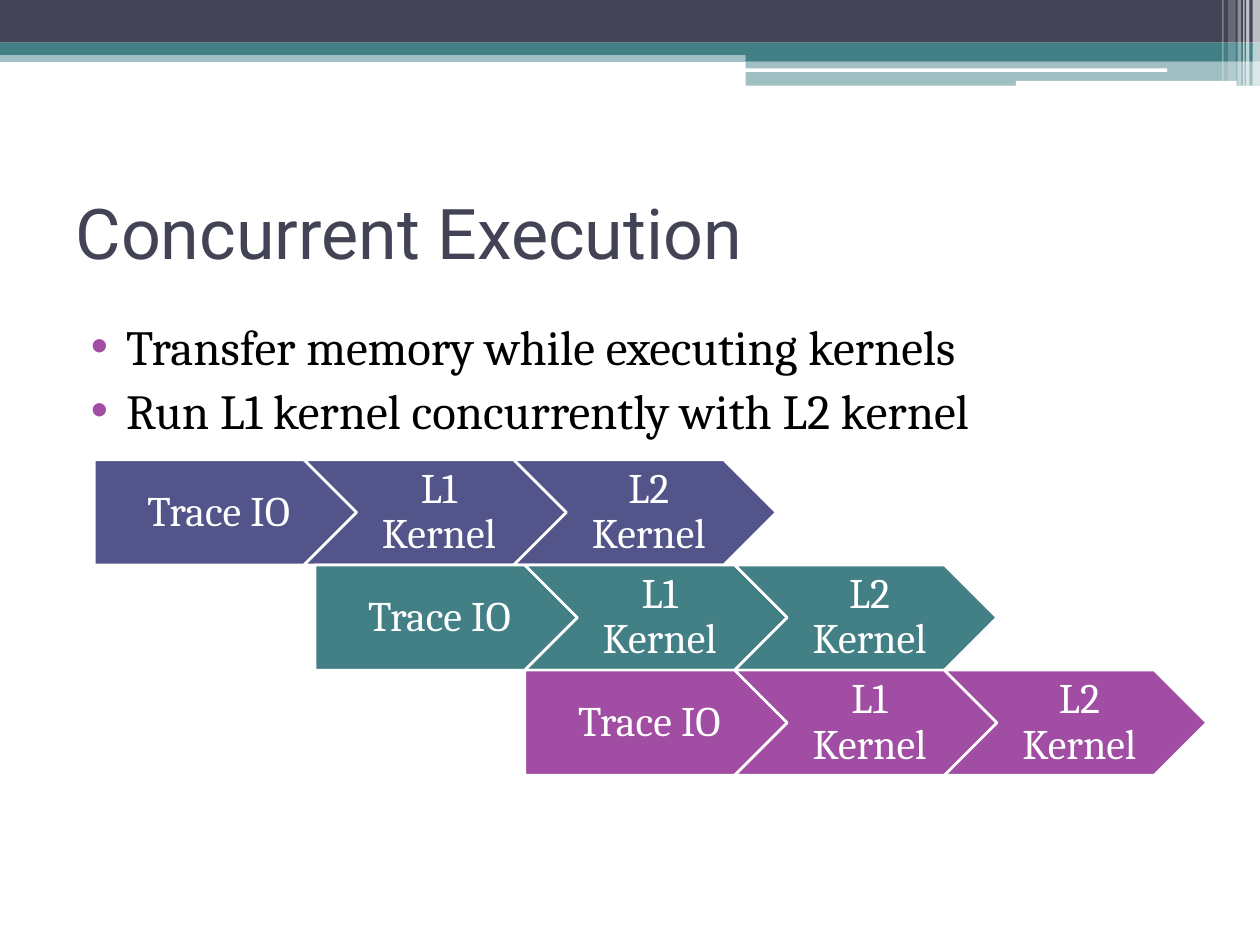
from lxml.etree import SubElement
from pptx import Presentation
from pptx.dml.color import RGBColor
from pptx.enum.shapes import MSO_SHAPE as Shape
from pptx.enum.text import MSO_ANCHOR as Anchor, MSO_AUTO_SIZE as AutoSize, PP_ALIGN as Align
from pptx.oxml.ns import qn
from pptx.util import Cm, Pt

COLORS = {
    "slate": "424456", "teal": "438086", "indigo": "53548A",
    "purple": "A04DA3", "white": "FFFFFF", "black": "000000",
}
FRAME = {"word_wrap": True, "auto_size": AutoSize.NONE}
MIDDLE = {**FRAME, "vertical_anchor": Anchor.MIDDLE}
STEP_FRAME = {**MIDDLE, "margin_right": Cm(0.1), "margin_top": Cm(0.18), "margin_bottom": Cm(0.18)}
TITLE_FONT = {"name": "Roboto", "size": Pt(40)}
BULLET_FONT = {"name": "Cambria", "size": Pt(28)}
STEP_FONT = {"name": "Cambria", "size": Pt(24)}


def apply_format(target, values, color=None):
    for name, value in values.items():
        setattr(target, name, value)
    if color:
        target.color.rgb = RGBColor.from_string(COLORS[color])


def add_filled(kind, left, top, width, height, color, opacity=100):
    shape = slide.shapes.add_shape(kind, Cm(left), Cm(top), Cm(width), Cm(height))
    shape.shadow.inherit = False
    shape.line.fill.background()
    shape.fill.solid()
    shape.fill.fore_color.rgb = RGBColor.from_string(COLORS[color])
    if opacity < 100:
        srgb = shape.fill._xPr.find(qn("a:solidFill")).find(qn("a:srgbClr"))
        SubElement(srgb, qn("a:alpha"), val=str(opacity * 1000))
    return shape


deck = Presentation()
deck.slide_width, deck.slide_height = Cm(25.4), Cm(19.05)
slide = deck.slides.add_slide(deck.slide_layouts[1])

# Header bands
for left, top, width, height, color, opacity in (
    (0, 1.02, 25.4, 0.23, "teal", 50),
    (0, 0, 25.4, 0.86, "slate", 100),
    (0, 0.86, 25.4, 0.25, "teal", 100),
    (15.03, 0.99, 10.37, 0.24, "teal", 100),
    (15.03, 1.23, 10.37, 0.5, "teal", 50),
):
    add_filled(Shape.RECTANGLE, left, top, width, height, color, opacity)

# White header lines
for left, top, width, height in ((15.02, 1.38, 8.51, 0.07), (20.48, 1.63, 4.45, 0.1)):
    add_filled(Shape.ROUNDED_RECTANGLE, left, top, width, height, "white")

# Stripes at the right edge of the header
for left, width, height, opacity in (
    (25.25, 0.15, 1.73, 65), (25.12, 0.07, 1.73, 65), (25.06, 0.03, 1.73, 60),
    (24.95, 0.07, 1.73, 40), (24.76, 0.15, 1.63, 20), (24.64, 0.03, 1.63, 30),
):
    add_filled(Shape.RECTANGLE, left, 0, width, height, "white", opacity)

# Title
title = slide.shapes.title
apply_format(title, {"left": Cm(1.27), "top": Cm(3.18), "width": Cm(22.86), "height": Cm(2.97)})
apply_format(title.text_frame, MIDDLE)
title.text_frame.text = "Concurrent Execution"
heading = title.text_frame.paragraphs[0]
heading.alignment = Align.LEFT
apply_format(heading.runs[0].font, TITLE_FONT, "slate")

# Bullet list
body = slide.placeholders[1]
apply_format(body, {"left": Cm(1.27), "top": Cm(6.25), "width": Cm(22.86), "height": Cm(12.01)})
apply_format(body.text_frame, FRAME)
body.text_frame.text = "Transfer memory while executing kernels\nRun L1 kernel concurrently with L2 kernel"
for point in body.text_frame.paragraphs:
    point.space_before = Pt(3)
    apply_format(point.runs[0].font, BULLET_FONT, "black")
    properties = point._p.get_or_add_pPr()
    properties.set("marL", str(Cm(1.02)))
    properties.set("indent", str(Cm(-0.71)))
    bullet_color = SubElement(properties, qn("a:buClr"))
    SubElement(bullet_color, qn("a:srgbClr"), val=COLORS["purple"])
    SubElement(properties, qn("a:buFont"), typeface="Arial")
    SubElement(properties, qn("a:buChar"), char="•")

# Staggered pipelines, one row per trace
STEPS = (
    ("Trace IO", Shape.PENTAGON, 0.36),
    ("L1 Kernel", Shape.CHEVRON, 0.25),
    ("L2 Kernel", Shape.CHEVRON, 0.25),
)
STEP_WIDTH, STEP_HEIGHT, STEP_PITCH = 5.29, 2.12, 4.23
FIRST_ROW_TOP = 9.27
for row, (start, color) in enumerate(((1.9, "indigo"), (6.35, "teal"), (10.58, "purple"))):
    for column, (label, kind, margin_left) in enumerate(STEPS):
        step = add_filled(kind, start + column * STEP_PITCH, FIRST_ROW_TOP + row * STEP_HEIGHT,
                          STEP_WIDTH, STEP_HEIGHT, color)
        apply_format(step.line, {"width": Pt(1.5)}, "white")
        apply_format(step.text_frame, {**STEP_FRAME, "margin_left": Cm(margin_left)})
        step.text_frame.text = label
        caption = step.text_frame.paragraphs[0]
        apply_format(caption, {"alignment": Align.CENTER, "line_spacing": 0.9})
        apply_format(caption.runs[0].font, STEP_FONT, "white")

deck.save("out.pptx")
